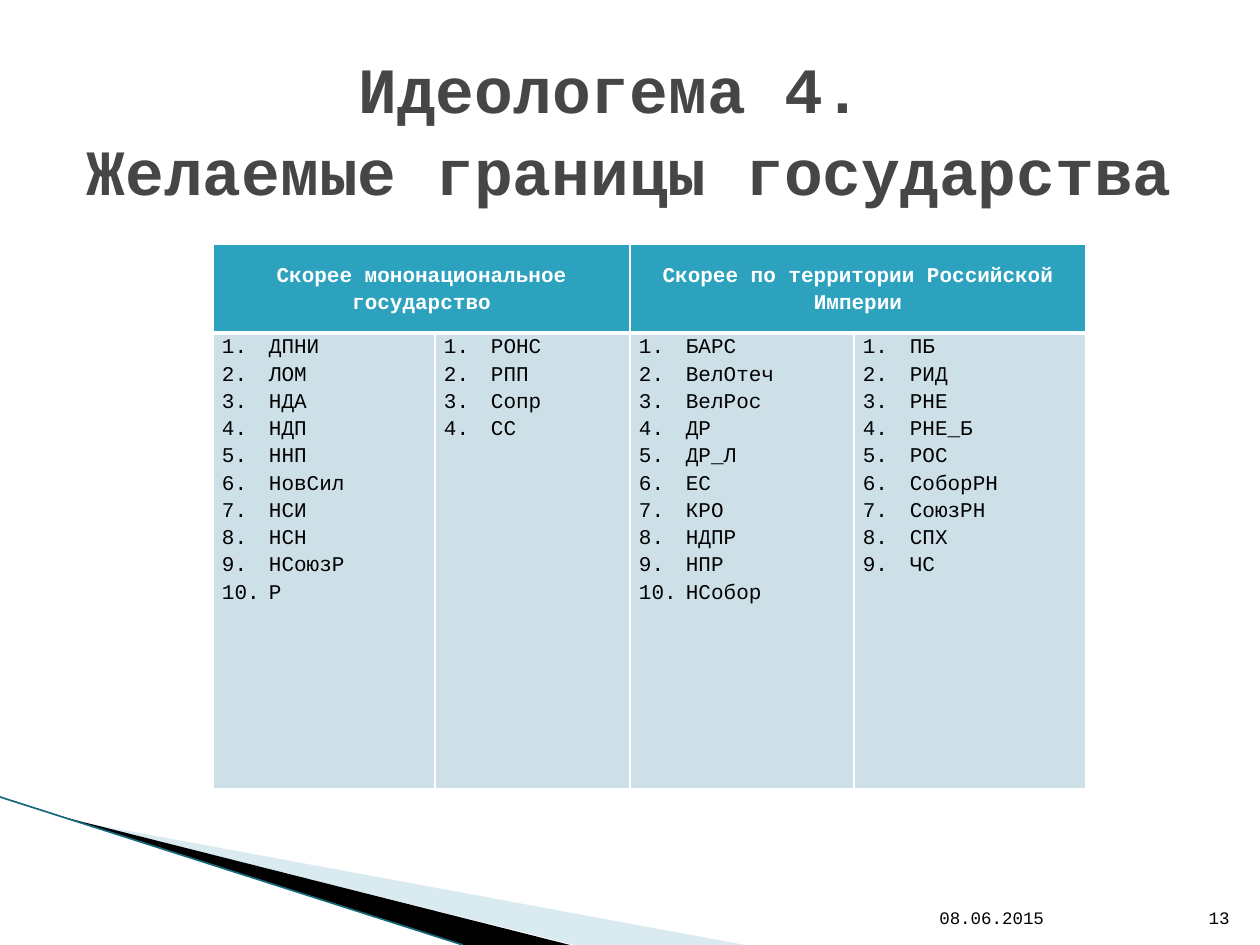
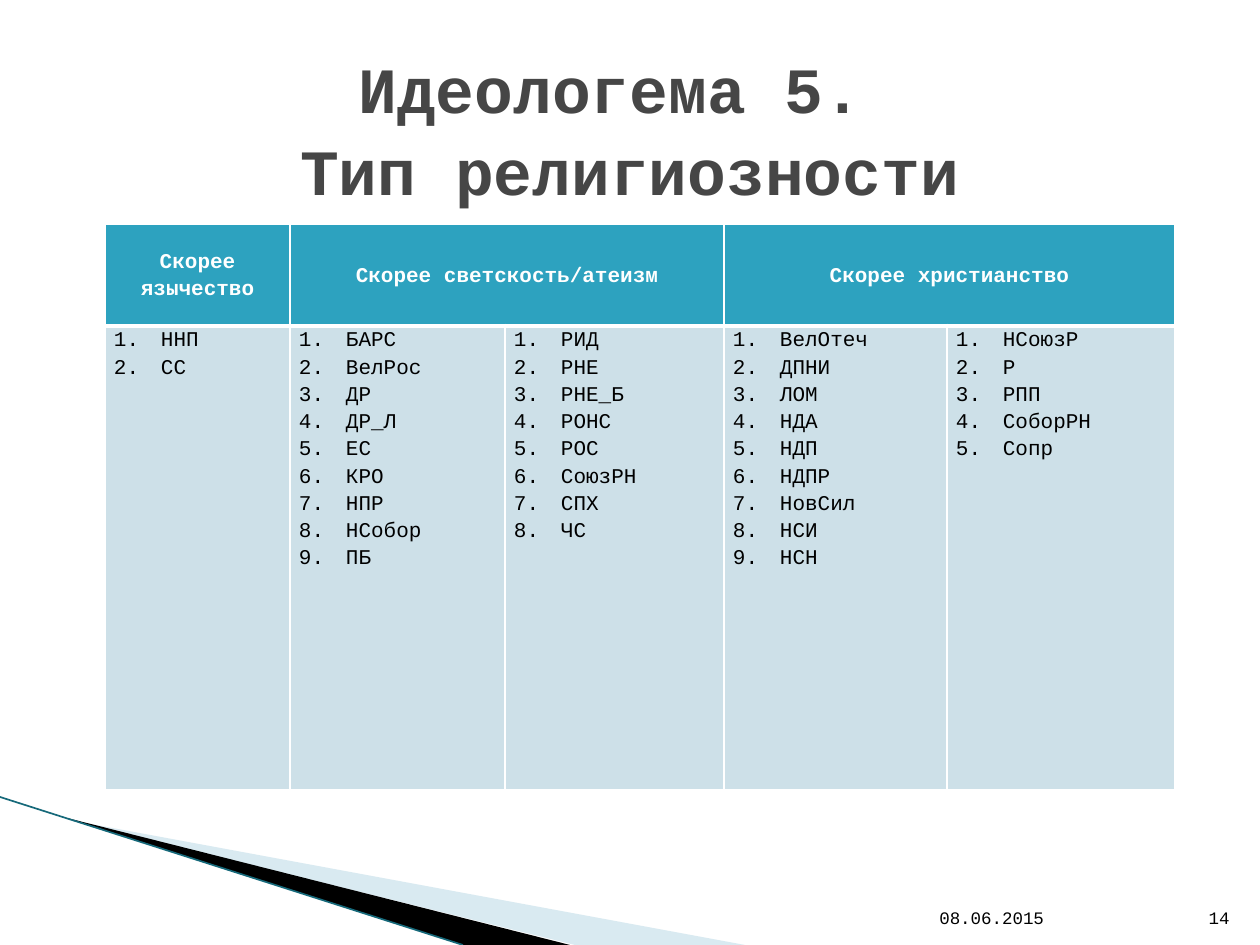
from dataclasses import dataclass

from lxml.etree import SubElement
from pptx import Presentation
from pptx.dml.color import RGBColor
from pptx.enum.shapes import MSO_CONNECTOR
from pptx.enum.text import MSO_ANCHOR, PP_ALIGN
from pptx.oxml.ns import qn
from pptx.util import Pt

EMU_PER_PX = 914400 / 126


@dataclass(frozen=True)
class Theme:
    """Colours, font and type sizes shared by the slides."""
    font: str = "Courier New"
    title: str = "464646"
    text: str = "000000"
    white: str = "FFFFFF"
    header: str = "2DA2BF"
    body: str = "CDE0E8"
    swoosh: str = "A0CBDC"
    edge: str = "16697A"
    title_size: float = 36.9
    table_size: float = 12
    footer_size: float = 10


THEME = Theme()
SLIDE_SIZE = (1260, 945)
TITLE_BOX = (63, 38, 1134, 158)
SWOOSH_BOX = (0, 797, 745, 148)
FOOTER_BOX = (927, 883, 315, 51)
DATE = "08.06.2015"

BORDERS = SLIDES = [
    dict(
        number=13,
        title=("Идеологема 4. ", "Желаемые границы государства"),
        origin=(213, 244),
        widths=(222, 195, 224, 232),
        heights=(89, 456),
        headers=[("Скорее мононациональное государство", 2),
                 ("Скорее по территории Российской Империи", 2)],
        columns=["ДПНИ ЛОМ НДА НДП ННП НовСил НСИ НСН НСоюзР Р",
                 "РОНС РПП Сопр СС",
                 "БАРС ВелОтеч ВелРос ДР ДР_Л ЕС КРО НДПР НПР НСобор",
                 "ПБ РИД РНЕ РНЕ_Б РОС СоборРН СоюзРН СПХ ЧС"],
    ),
    dict(
        number=14,
        title=("Идеологема 5. ", "Тип религиозности"),
        origin=(105, 224),
        widths=(185, 215, 219, 223, 228),
        heights=(102, 464),
        headers=[("Скорее язычество", 1),
                 ("Скорее светскость/атеизм", 2),
                 ("Скорее христианство", 2)],
        columns=["ННП СС",
                 "БАРС ВелРос ДР ДР_Л ЕС КРО НПР НСобор ПБ",
                 "РИД РНЕ РНЕ_Б РОНС РОС СоюзРН СПХ ЧС",
                 "ВелОтеч ДПНИ ЛОМ НДА НДП НДПР НовСил НСИ НСН",
                 "НСоюзР Р РПП СоборРН Сопр"],
    ),
]


def px(n):
    """Turn pixels into EMU."""
    return round(n * EMU_PER_PX)


def rgb(color):
    """Turn a hex string into a colour."""
    return RGBColor.from_string(color)


def add_run(p, text, size, color, bold=False):
    """Add one styled run to a paragraph."""
    r = p.add_run()
    r.text = text
    r.font.name = THEME.font
    r.font.size = Pt(size)
    r.font.bold = bold
    r.font.color.rgb = rgb(color)


def add_text_frame(s, box, anchor):
    """Add a wrapping text box and return its text frame."""
    tf = s.shapes.add_textbox(*map(px, box)).text_frame
    tf.word_wrap = True
    tf.vertical_anchor = anchor
    return tf


def add_title(s, box, lines):
    """Add the centred two-line title."""
    tf = add_text_frame(s, box, MSO_ANCHOR.MIDDLE)
    tf.margin_top = px(24)
    p = tf.paragraphs[0]
    p.alignment = PP_ALIGN.CENTER
    p.line_spacing = 1.07
    for i, line in enumerate(lines):
        if i:
            p.add_line_break()
        add_run(p, line, THEME.title_size, THEME.title, bold=True)


def add_footer(s, box, number):
    """Add the date and the slide number."""
    x, y, w, h = box
    number_w = 50
    parts = [(DATE, x, w - number_w, PP_ALIGN.LEFT),
             (str(number), x + w - number_w, number_w, PP_ALIGN.RIGHT)]
    for text, left, width, alignment in parts:
        tf = add_text_frame(s, (left, y, width, h), MSO_ANCHOR.BOTTOM)
        p = tf.paragraphs[0]
        p.alignment = alignment
        add_run(p, text, THEME.footer_size, THEME.text)


def add_swoosh(s, box):
    """Draw the two wedges and the edge line in the lower left corner."""
    x, y, w, h = box
    wedges = [(THEME.swoosh, 40, [(69, 23), (w, h), (575, h)]),
              (THEME.text, 100, [(67, 21), (570, h), (463, h)])]
    for color, opacity, points in wedges:
        builder = s.shapes.build_freeform(*points[0], scale=EMU_PER_PX)
        builder.add_line_segments(points[1:], close=True)
        sp = builder.convert_to_shape(px(x), px(y))
        sp.shadow.inherit = False
        sp.fill.solid()
        sp.fill.fore_color.rgb = rgb(color)
        sp.line.fill.background()
        if opacity < 100:
            clr = sp.fill._xPr.find(qn("a:solidFill"))[0]
            SubElement(clr, qn("a:alpha"), val=str(opacity * 1000))
    edge = s.shapes.add_connector(
        MSO_CONNECTOR.STRAIGHT, px(x), px(y), px(x + 463), px(y + h))
    edge.line.color.rgb = rgb(THEME.edge)
    edge.line.width = Pt(0.95)
    SubElement(edge._element.spPr, qn("a:effectLst"))


def style_cell(cell, fill, top, bottom):
    """Set the borders, margins and fill of a cell."""
    tcPr = cell._tc.get_or_add_tcPr()
    for side, width in (("L", 1), ("R", 1), ("T", top), ("B", bottom)):
        ln = SubElement(tcPr, qn(f"a:ln{side}"), w=str(Pt(width)))
        solid = SubElement(ln, qn("a:solidFill"))
        SubElement(solid, qn("a:srgbClr"), val=THEME.white)
    cell.margin_left = cell.margin_right = px(9)
    cell.margin_top = cell.margin_bottom = 0
    cell.fill.solid()
    cell.fill.fore_color.rgb = rgb(fill)


def fill_header(cell, text):
    """Write a centred column heading."""
    cell.vertical_anchor = MSO_ANCHOR.MIDDLE
    p = cell.text_frame.paragraphs[0]
    p.alignment = PP_ALIGN.CENTER
    p.line_spacing = 1.15
    add_run(p, text, THEME.table_size, THEME.white, bold=True)


def fill_list(cell, names):
    """Write a numbered list of names."""
    tf = cell.text_frame
    for i, name in enumerate(names):
        p = tf.add_paragraph() if i else tf.paragraphs[0]
        pPr = p._p.get_or_add_pPr()
        pPr.set("marL", str(px(47)))
        pPr.set("indent", str(px(-47)))
        SubElement(pPr, qn("a:buFont"), typeface=THEME.font)
        SubElement(pPr, qn("a:buAutoNum"), type="arabicPeriod")
        p.alignment = PP_ALIGN.JUSTIFY
        p.line_spacing = 1.15
        add_run(p, name, THEME.table_size, THEME.text)


def add_groups_table(s, origin, widths, heights, headers, columns):
    """Add the table of groups under spanning headings."""
    box = (*origin, sum(widths), sum(heights))
    table = s.shapes.add_table(2, len(widths), *map(px, box)).table
    table.horz_banding = False
    for column, width in zip(table.columns, widths):
        column.width = px(width)
    for row, height in zip(table.rows, heights):
        row.height = px(height)
    for i, names in enumerate(columns):
        style_cell(table.cell(0, i), THEME.header, top=1, bottom=3)
        style_cell(table.cell(1, i), THEME.body, top=3, bottom=1)
        fill_list(table.cell(1, i), names.split())
    first = 0
    for text, span in headers:
        cell = table.cell(0, first)
        if span > 1:
            cell.merge(table.cell(0, first + span - 1))
        fill_header(cell, text)
        first += span


def add_slide(prs, number, title, **groups):
    """Add one slide with its title, table and shared parts."""
    s = prs.slides.add_slide(prs.slide_layouts[6])
    add_swoosh(s, SWOOSH_BOX)
    add_groups_table(s, **groups)
    add_footer(s, FOOTER_BOX, number)
    add_title(s, TITLE_BOX, title)


def main():
    """Build and save the presentation."""
    prs = Presentation()
    prs.slide_width, prs.slide_height = map(px, SLIDE_SIZE)
    for content in SLIDES:
        add_slide(prs, **content)
    prs.save("out.pptx")


if __name__ == "__main__":
    main()
